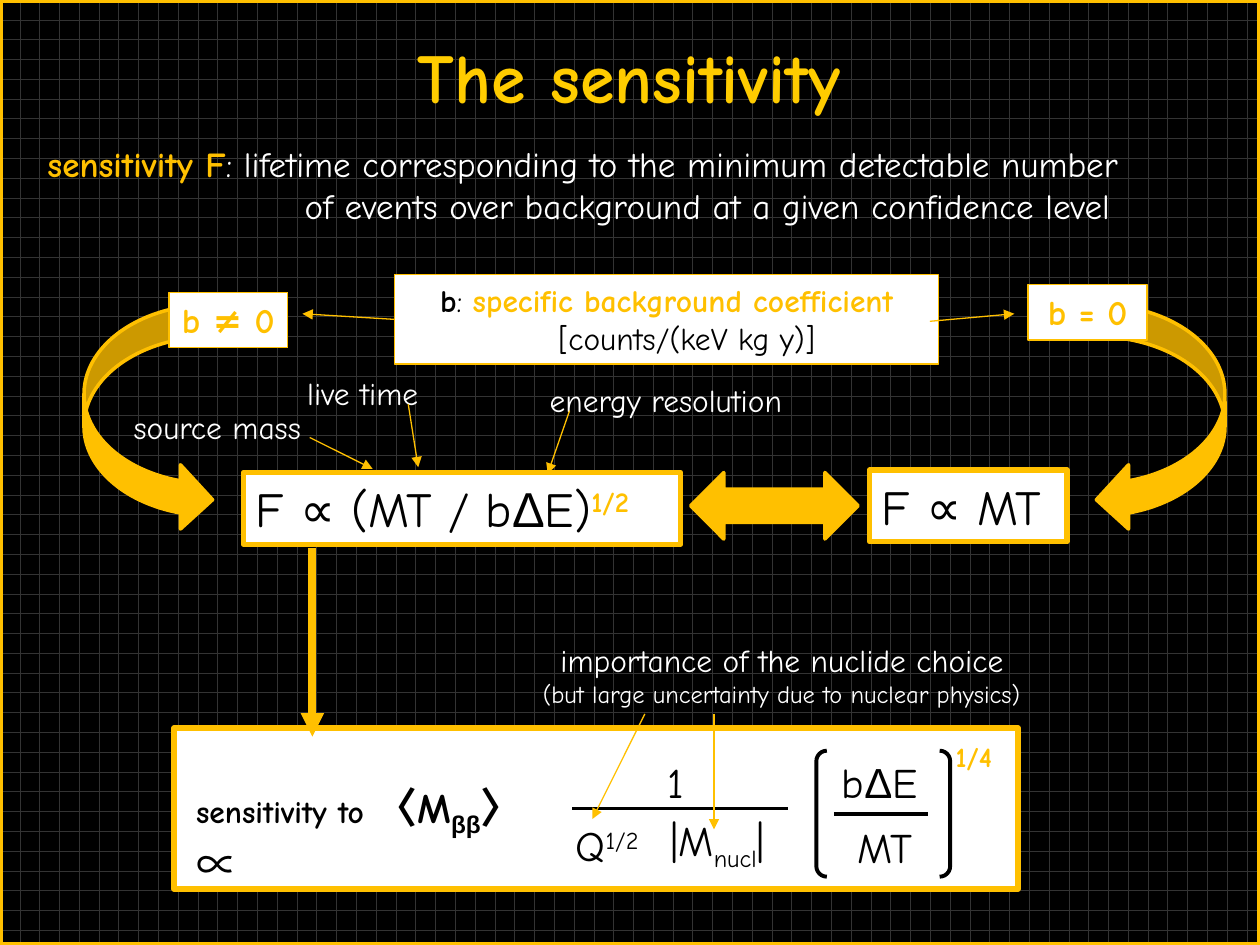
from dataclasses import dataclass
from typing import Optional

from lxml.etree import SubElement
from pptx import Presentation
from pptx.dml.color import RGBColor
from pptx.enum.dml import MSO_PATTERN_TYPE as Pattern
from pptx.enum.shapes import MSO_CONNECTOR as Connector, MSO_SHAPE as Shape
from pptx.enum.text import MSO_ANCHOR as Anchor, PP_ALIGN as Align
from pptx.oxml.ns import qn
from pptx.util import Pt

COLORS = {"gold": "FFC000", "title": "FFCC00", "white": "FFFFFF",
          "black": "000000", "grid": "333333"}
LABEL_FONT, GREEK_FONT = "Comic Neue", "Arial"
SUPERSCRIPT, SUBSCRIPT = 30000, -25000


@dataclass
class Span:
    text: str
    size: float
    color: str = "black"
    bold: bool = False
    font: str = LABEL_FONT
    baseline: int = 0


@dataclass
class Line:
    spans: list[Span]
    indent: float = 0


@dataclass
class Box:
    """Text in a frame; a border width makes it a white panel."""
    left: float
    top: float
    width: float
    height: float
    lines: list[Line]
    centred: bool = False
    border: Optional[float] = None


@dataclass
class Stroke:
    x1: float
    y1: float
    x2: float
    y2: float
    color: str = "gold"
    width: float = 0.75
    arrow: bool = True


def rgb(name: str) -> RGBColor:
    return RGBColor.from_string(COLORS[name])


def draw_shape(slide, kind, left, top, width, height, fill=None,
               line="gold", weight=2.0, flipped=False):
    shape = slide.shapes.add_shape(kind, Pt(left), Pt(top), Pt(width), Pt(height))
    shape.shadow.inherit = False
    if fill:
        shape.fill.solid()
        shape.fill.fore_color.rgb = rgb(fill)
    else:
        shape.fill.background()
    shape.line.color.rgb = rgb(line)
    shape.line.width = Pt(weight)
    if flipped:
        shape.element.spPr.find(qn("a:xfrm")).set("flipH", "1")
    return shape


def draw_box(slide, box: Box):
    place = (box.left, box.top, box.width, box.height)
    if box.border is None:
        shape = slide.shapes.add_textbox(*map(Pt, place))
    else:
        shape = draw_shape(slide, Shape.RECTANGLE, *place, "white", weight=box.border)
    frame = shape.text_frame
    frame.word_wrap = not box.centred
    frame.vertical_anchor = Anchor.TOP
    for index, line in enumerate(box.lines):
        paragraph = frame.add_paragraph() if index else frame.paragraphs[0]
        paragraph.alignment = Align.CENTER if box.centred else Align.LEFT
        if line.indent:
            properties = paragraph._p.get_or_add_pPr()
            properties.set("marL", str(Pt(line.indent)))
            properties.set("indent", "0")
        for span in line.spans:
            run = paragraph.add_run()
            run.text = span.text
            run.font.name = span.font
            run.font.size = Pt(span.size)
            run.font.bold = span.bold
            run.font.color.rgb = rgb(span.color)
            if span.baseline:
                run.font._element.set("baseline", str(span.baseline))
    return shape


def draw_stroke(slide, stroke: Stroke):
    connector = slide.shapes.add_connector(
        Connector.STRAIGHT, Pt(stroke.x1), Pt(stroke.y1), Pt(stroke.x2), Pt(stroke.y2))
    connector.line.color.rgb = rgb(stroke.color)
    connector.line.width = Pt(stroke.width)
    if stroke.arrow:
        SubElement(connector.line._get_or_add_ln(), qn("a:tailEnd"), type="triangle")
    SubElement(connector.element.spPr, qn("a:effectLst"))
    return connector


def single(left, top, width, height, *spans: Span, **options) -> Box:
    return Box(left, top, width, height, [Line(list(spans))], **options)


def label(left, top, width, text) -> Box:
    return single(left, top, width, 29, Span(text, 18, "white"), centred=True)


def condition(left, top, text) -> Box:
    return single(left, top, 68, 31.7, Span(text, 20, "gold", True),
                  centred=True, border=0.75)


def draw_definition(slide):
    draw_box(slide, Box(20, 78, 699, 55, [
        Line([Span("sensitivity F", 20, "gold", True),
              Span(": lifetime corresponding to the minimum detectable number", 20, "white")]),
        Line([Span("of events over background at a given confidence level", 20, "white")], 147),
    ]))


def draw_mass_sensitivity(slide):
    draw_box(slide, Box(289.5, 363, 314.5, 46, [
        Line([Span("importance of the nuclide choice", 18, "white")]),
        Line([Span("(but large uncertainty due to nuclear physics)", 14, "white")]),
    ], centred=True))
    draw_shape(slide, Shape.RECTANGLE, 99.4, 416, 482.4, 92, "white", weight=3)
    for box in (
        single(105, 443, 229, 37, Span("sensitivity to ", 18, bold=True),
               Span("〈M", 24, bold=True),
               Span("ββ", 24, bold=True, font=GREEK_FONT, baseline=SUBSCRIPT),
               Span("〉 ", 24, bold=True), Span("∝", 24)),
        single(374.5, 429, 25, 37, Span("1", 24)),
        single(474, 429, 60, 37, Span("b", 24), Span("Δ", 24, font=GREEK_FONT), Span("E", 24)),
        single(483, 466, 53, 37, Span("MT", 24)),
        single(322, 465, 62, 37, Span("Q", 24), Span("1/2", 24, baseline=SUPERSCRIPT)),
        single(539, 419, 42.5, 27, Span("1/4", 16, "gold", True)),
        single(376, 462, 86, 37, Span("|M", 24),
               Span("nucl", 24, baseline=SUBSCRIPT), Span("|", 24)),
    ):
        draw_box(slide, box)
    for left, flipped in ((466.5, False), (537, True)):
        bracket = draw_shape(slide, Shape.LEFT_BRACKET, left, 429, 6, 72,
                             line="black", weight=2.25, flipped=flipped)
        bracket.adjustments[0] = 1
    for stroke in (
        Stroke(327, 462, 450, 462, "black", 2.25, False),
        Stroke(476.5, 465, 530.5, 465, "black", 2.25, False),
        Stroke(178.5, 313, 178.5, 421, width=4.5),
        Stroke(368.5, 408, 338.5, 468),
        Stroke(408, 408, 408, 474),
    ):
        draw_stroke(slide, stroke)


def draw_lifetime_formulas(slide):
    for left, flipped in ((48, False), (626.5, True)):
        draw_shape(slide, Shape.CURVED_RIGHT_ARROW, left, 174, 73.5, 130, "gold",
                   flipped=flipped)
    for box in (
        single(139, 270, 250, 41, Span("F ∝ (MT / b", 28), Span("Δ", 28, font=GREEK_FONT),
               Span("E)", 28), Span("1/2", 28, "gold", True, baseline=SUPERSCRIPT), border=3),
        single(496.8, 268.6, 113, 41, Span("F ∝ MT", 28), border=3),
        label(300, 214, 161, "energy resolution"),
        label(164, 210, 86.5, "live time"),
        label(65.5, 229.7, 117.4, "source mass"),
    ):
        draw_box(slide, box)
    for stroke in (Stroke(325.5, 234.7, 313, 270.7), Stroke(233.3, 231, 239, 267),
                   Stroke(177, 250, 213, 268)):
        draw_stroke(slide, stroke)
    draw_shape(slide, Shape.LEFT_RIGHT_ARROW, 394.6, 270, 95.8, 38, "gold")


def draw_background_coefficient(slide):
    draw_box(slide, condition(587.5, 162.7, "b = 0"))
    coefficient = draw_box(slide, Box(225.4, 157, 311, 51, [
        Line([Span("b", 18, bold=True), Span(": ", 18),
              Span("specific background coefficient", 18, "gold", True)]),
        Line([Span("[counts/(keV kg y)]", 18)], 23),
    ], centred=True, border=0.75))
    to_nonzero = draw_stroke(slide, Stroke(225.4, 182.5, 172.8, 179.3))
    to_nonzero.begin_connect(coefficient, 1)
    draw_stroke(slide, Stroke(531.4, 183.6, 579.6, 179.3))
    draw_box(slide, condition(96.5, 167, "b ≠ 0"))


def main():
    presentation = Presentation()
    presentation.slide_width, presentation.slide_height = Pt(720), Pt(540)
    slide = presentation.slides.add_slide(presentation.slide_layouts[6])
    background = slide.background.fill
    background.patterned()
    background.pattern = Pattern.DOTTED_GRID
    background.fore_color.rgb = rgb("grid")
    background.back_color.rgb = rgb("black")
    draw_shape(slide, Shape.RECTANGLE, 0, 0, 720, 540, weight=3)
    draw_definition(slide)
    draw_mass_sensitivity(slide)
    draw_lifetime_formulas(slide)
    draw_box(slide, single(36.7, 15.8, 645.8, 90,
                           Span("The sensitivity", 40, "title", True), centred=True))
    draw_background_coefficient(slide)
    presentation.save("out.pptx")


if __name__ == "__main__":
    main()
